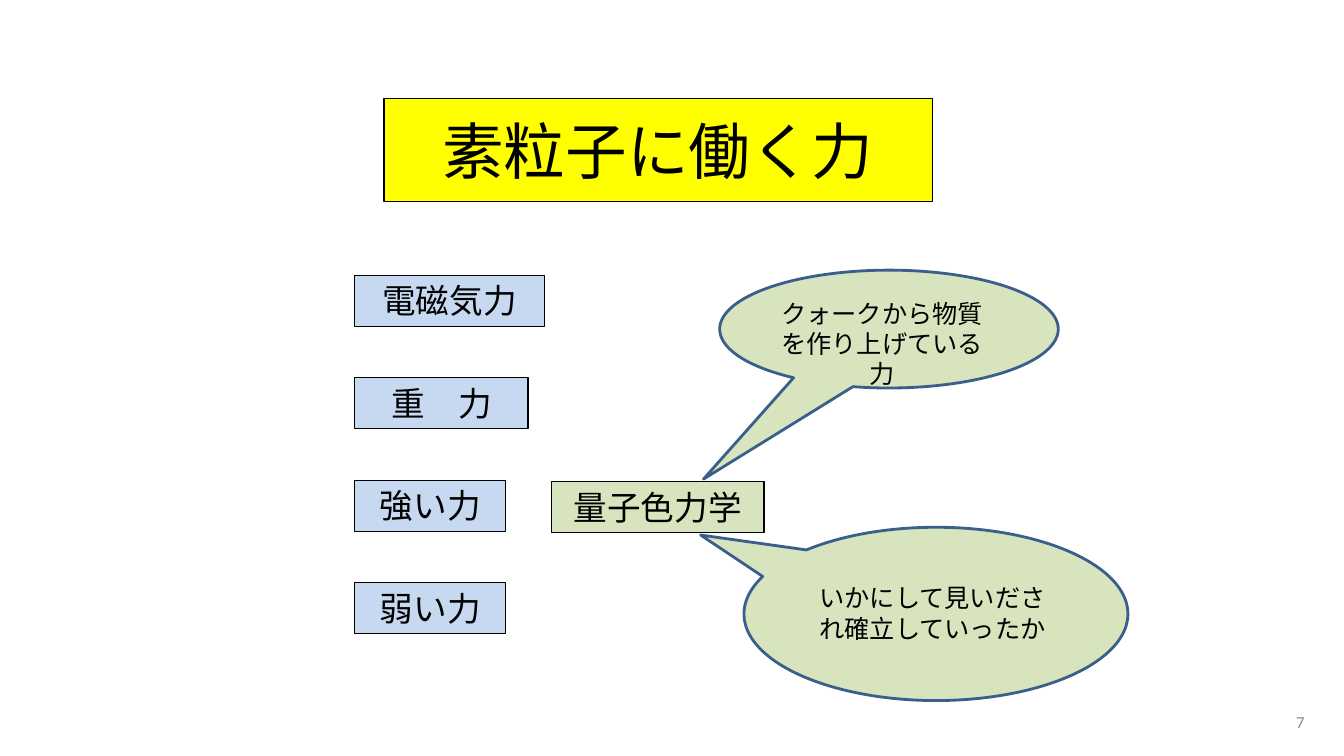
from dataclasses import dataclass

from pptx import Presentation
from pptx.dml.color import RGBColor
from pptx.enum import shapes, text
from pptx.util import Pt

# Content: boxes are (left, top, width, height) in points
TITLE = ("素粒子に働く力", (274.3, 70.6, 391.7, 73.4))
FORCES = [("電磁気力", 135.4), ("重　力", 123.8), ("強い力", 108), ("弱い力", 108)]
THEORY = ("量子色力学", (393.8, 344.2, 152, 36.4))
CALLOUTS = [
    # bubble, pointer tip, words, words box, font, alignment
    ((514.1, 193, 241.9, 84.2), (-0.548, 1.273), "クォークから物質を作り上げている力",
     (545.8, 209.5, 168.5, 51.1), "Arial", text.PP_ALIGN.CENTER),
    ((531.4, 376.6, 274.3, 123.8), (-0.613, -0.455), "いかにして見いだされ確立していったか",
     (578.2, 412.6, 181.4, 51.1), "Calibri", text.PP_ALIGN.LEFT),
]
PAGE_NUMBER = ("7", (715, 501.1, 223.9, 28.8))
FORCE_LEFT, FORCE_TOP, FORCE_PITCH, FORCE_HEIGHT = 253.4, 196.6, 73.2, 36.6


@dataclass(frozen=True)
class Theme:
    yellow: str = "FFFF00"
    blue: str = "C6D9F1"
    green: str = "D7E4BD"
    black: str = "000000"
    outline: str = "3A5F8C"
    grey: str = "8C8C8C"
    title_size: int = 44
    box_size: int = 24
    callout_size: int = 18
    number_size: int = 12


theme = Theme()
RECT = shapes.MSO_SHAPE.RECTANGLE
BUBBLE = shapes.MSO_SHAPE.OVAL_CALLOUT
MIDDLE = text.MSO_ANCHOR.MIDDLE

deck = Presentation()
deck.slide_width, deck.slide_height = Pt(960), Pt(540)
slide = deck.slides.add_slide(deck.slide_layouts[6])


def write(holder, words, size, font="Arial", color=theme.black,
          align=text.PP_ALIGN.CENTER, anchor=text.MSO_ANCHOR.TOP):
    frame = holder.text_frame
    frame.word_wrap = True
    frame.vertical_anchor = anchor
    line = frame.paragraphs[0]
    line.alignment = align
    run = line.add_run()
    run.text = words
    run.font.name, run.font.size = font, Pt(size)
    run.font.color.rgb = RGBColor.from_string(color)


def draw(kind, box, fill, line_color=theme.black, line_width=0.75):
    shape = slide.shapes.add_shape(kind, *map(Pt, box))
    shape.shadow.inherit = False
    shape.fill.solid()
    shape.fill.fore_color.rgb = RGBColor.from_string(fill)
    shape.line.color.rgb = RGBColor.from_string(line_color)
    shape.line.width = Pt(line_width)
    return shape


def add_words(box, *args, **style):
    write(slide.shapes.add_textbox(*map(Pt, box)), *args, **style)


# Page number and title
number, number_box = PAGE_NUMBER
add_words(number_box, number, theme.number_size, font="Calibri", color=theme.grey,
          align=text.PP_ALIGN.RIGHT, anchor=MIDDLE)
title, title_box = TITLE
write(draw(RECT, title_box, theme.yellow), title, theme.title_size, anchor=MIDDLE)

# Column of the four forces
for row, (force, width) in enumerate(FORCES):
    force_box = (FORCE_LEFT, FORCE_TOP + row * FORCE_PITCH, width, FORCE_HEIGHT)
    write(draw(RECT, force_box, theme.blue), force, theme.box_size)

# Theory of the strong force
theory, theory_box = THEORY
write(draw(RECT, theory_box, theme.green), theory, theme.box_size)

# Callouts pointing at the theory
for bubble_box, tip, remark, remark_box, font, align in CALLOUTS:
    bubble = draw(BUBBLE, bubble_box, theme.green, theme.outline, 2)
    bubble.adjustments[0], bubble.adjustments[1] = tip
    add_words(remark_box, remark, theme.callout_size, font=font, align=align)

deck.save("out.pptx")
